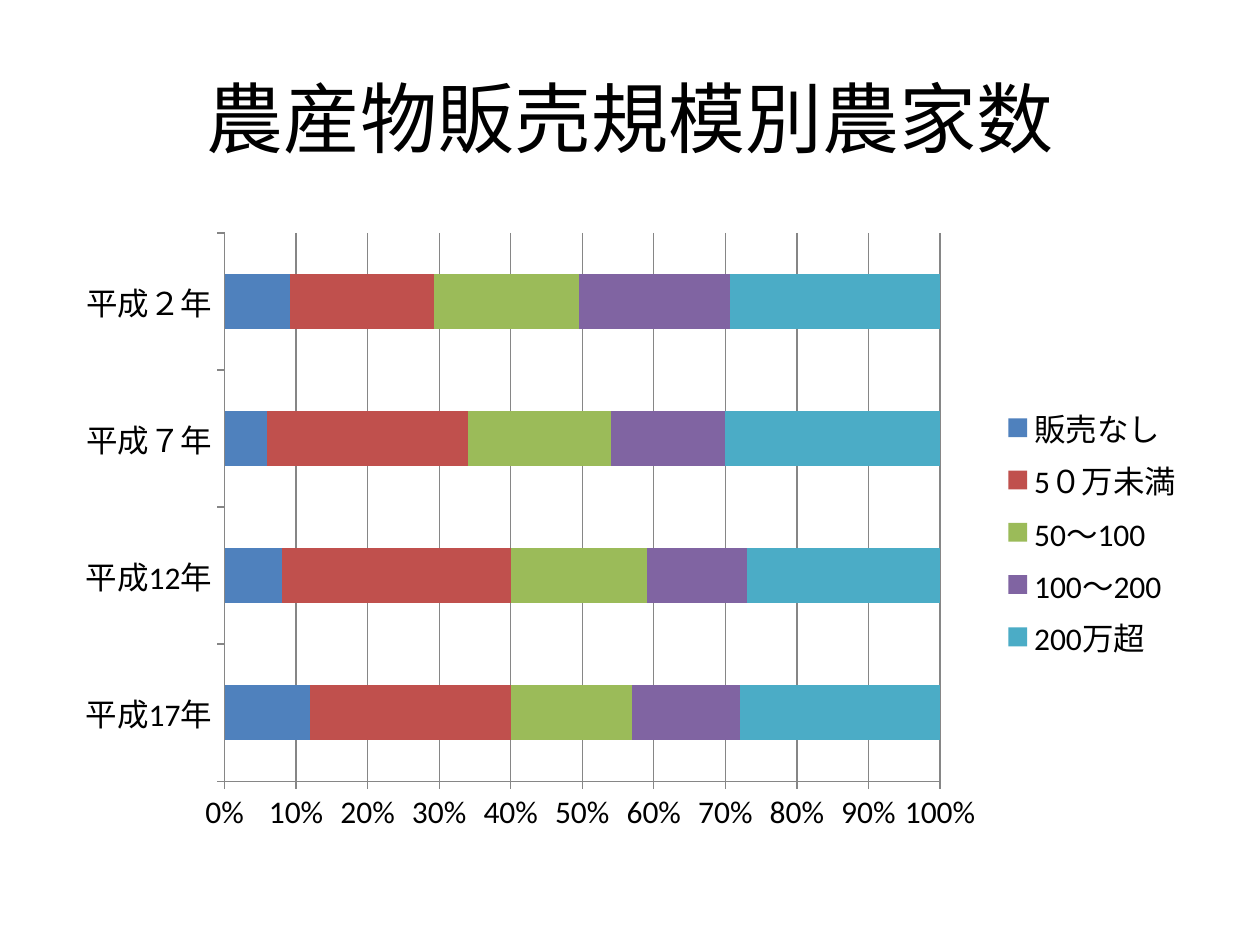
from pptx import Presentation
from pptx.chart.data import CategoryChartData
from pptx.dml.color import RGBColor
from pptx.enum import chart as ch, text
from pptx.util import Inches, Pt

TITLE = "農産物販売規模別農家数"
YEARS = ["平成17年", "平成12年", "平成７年", "平成２年"]
SALES = [
    ("販売なし", (12, 8, 6, 9), "4F81BD"),
    ("5０万未満", (28, 32, 28, 20), "C0504D"),
    ("50～100", (17, 19, 20, 20), "9BBB59"),
    ("100～200", (15, 14, 16, 21), "8064A2"),
    ("200万超", (28, 27, 30, 29), "4BACC6"),
]
THEME = {"font": "Calibri", "ink": "000000", "line": "868686", "title": 44, "body": 18}


def style(font, size):
    font.name = THEME["font"]
    font.size = Pt(size)
    font.bold = False
    font.color.rgb = RGBColor.from_string(THEME["ink"])


def rule(line):
    line.color.rgb = RGBColor.from_string(THEME["line"])
    line.width = Pt(0.75)


def add_title(slide):
    title = slide.shapes.title
    title.left, title.top = Inches(0.5), Inches(0.3)
    title.width, title.height = Inches(9), Inches(1.25)
    frame = title.text_frame
    frame.text = TITLE
    frame.vertical_anchor = text.MSO_ANCHOR.MIDDLE
    para = frame.paragraphs[0]
    para.alignment = text.PP_ALIGN.CENTER
    style(para.font, THEME["title"])


def add_bars(slide):
    data = CategoryChartData(number_format="0")
    data.categories = YEARS
    for name, shares, _ in SALES:
        data.add_series(name, shares)
    chart = slide.shapes.add_chart(
        ch.XL_CHART_TYPE.BAR_STACKED_100,
        Inches(0.5), Inches(1.75), Inches(9), Inches(4.95), data,
    ).chart
    style(chart.font, THEME["body"])
    chart.has_title = False
    chart.has_legend = True
    chart.legend.position = ch.XL_LEGEND_POSITION.RIGHT
    chart.legend.include_in_layout = False

    plot = chart.plots[0]
    plot.gap_width, plot.overlap = 150, 100
    plot.vary_by_categories = False
    for bar, (_, _, color) in zip(plot.series, SALES):
        bar.format.fill.solid()
        bar.format.fill.fore_color.rgb = RGBColor.from_string(color)

    for axis in (chart.category_axis, chart.value_axis):
        axis.major_tick_mark = ch.XL_TICK_MARK.OUTSIDE
        axis.minor_tick_mark = ch.XL_TICK_MARK.NONE
        rule(axis.format.line)
    scale = chart.value_axis
    scale.minimum_scale, scale.maximum_scale, scale.major_unit = 0, 1, 0.1
    scale.has_major_gridlines = True
    rule(scale.major_gridlines.format.line)
    scale.tick_labels.number_format = "0%"
    scale.tick_labels.number_format_is_linked = False


def main():
    deck = Presentation()
    deck.slide_width, deck.slide_height = Inches(10), Inches(7.5)
    slide = deck.slides.add_slide(deck.slide_layouts[5])
    add_title(slide)
    add_bars(slide)
    deck.save("out.pptx")


if __name__ == "__main__":
    main()
